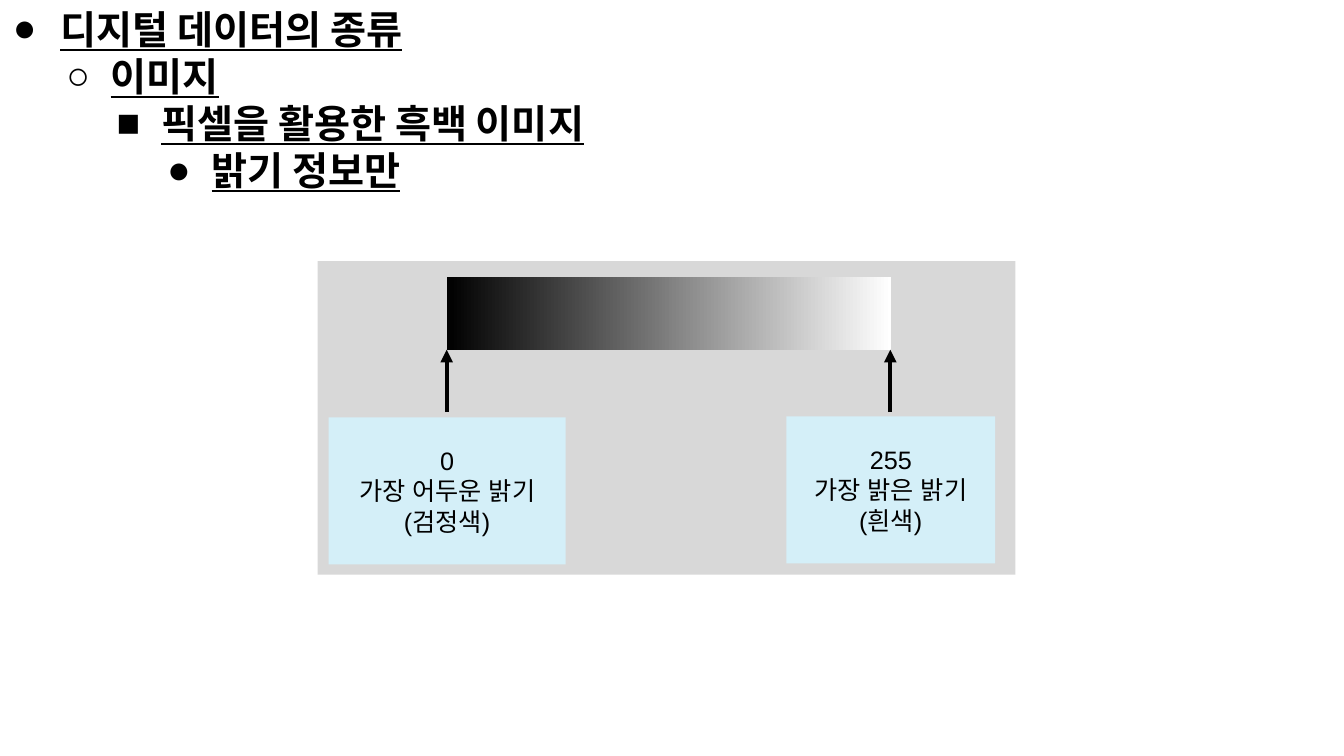
from lxml import etree
from pptx import Presentation
from pptx.dml.color import RGBColor
from pptx.enum.shapes import MSO_CONNECTOR, MSO_SHAPE
from pptx.enum.text import MSO_ANCHOR, PP_ALIGN
from pptx.oxml.ns import qn
from pptx.util import Inches, Pt

RECTANGLE = MSO_SHAPE.RECTANGLE
STRAIGHT = MSO_CONNECTOR.STRAIGHT
MIDDLE = MSO_ANCHOR.MIDDLE
CENTER = PP_ALIGN.CENTER

BLACK = RGBColor(0x00, 0x00, 0x00)
WHITE = RGBColor(0xFF, 0xFF, 0xFF)
GRAY = RGBColor(0xD8, 0xD8, 0xD8)
PALE_BLUE = RGBColor(0xD4, 0xEF, 0xF8)

OUTLINE_FONT = "Noto Sans CJK KR"
LABEL_FONT = "Arial"

OUTLINE = [
    ("●", "디지털 데이터의 종류"),
    ("○", "이미지"),
    ("■", "픽셀을 활용한 흑백 이미지"),
    ("●", "밝기 정보만"),
]


def format_run(run, font_name, size):
    run.font.name = font_name
    run.font.size = Pt(size)
    run.font.color.rgb = BLACK
    properties = run._r.get_or_add_rPr()
    etree.SubElement(properties, qn("a:ea")).set("typeface", font_name)


def add_bullet(paragraph, symbol, margin, indent):
    properties = paragraph._p.get_or_add_pPr()
    properties.set("marL", str(Inches(margin)))
    properties.set("indent", str(Inches(indent)))
    color = etree.SubElement(properties, qn("a:buClr"))
    etree.SubElement(color, qn("a:srgbClr")).set("val", str(BLACK))
    etree.SubElement(properties, qn("a:buFont")).set("typeface", LABEL_FONT)
    etree.SubElement(properties, qn("a:buChar")).set("char", symbol)


def add_outline(slide, left, top, width, height):
    box = slide.shapes.add_textbox(Inches(left), Inches(top), Inches(width), Inches(height))
    text_frame = box.text_frame
    text_frame.word_wrap = True
    text_frame.text = "\n".join(text for _, text in OUTLINE)
    for level, paragraph in enumerate(text_frame.paragraphs):
        paragraph.level = level
        paragraph.line_spacing = Pt(33.6)
        add_bullet(paragraph, OUTLINE[level][0], 0.5 * (level + 1), -0.44 if level else -0.47)
        run = paragraph.runs[0]
        format_run(run, OUTLINE_FONT, 28)
        run.font.bold = True
        run.font.underline = True


def add_rectangle(slide, left, top, width, height, color=None):
    shape = slide.shapes.add_shape(
        RECTANGLE, Inches(left), Inches(top), Inches(width), Inches(height)
    )
    shape.shadow.inherit = False
    shape.line.fill.background()
    if color is not None:
        shape.fill.solid()
        shape.fill.fore_color.rgb = color
    return shape


def add_gradient_bar(slide, left, top, width, height):
    bar = add_rectangle(slide, left, top, width, height)
    bar.fill.gradient()
    bar.fill.gradient_angle = 0
    for stop, position, color in zip(bar.fill.gradient_stops, (0, 1), (BLACK, WHITE)):
        stop.position = position
        stop.color.rgb = color


def add_up_arrow(slide, x, bottom, top):
    arrow = slide.shapes.add_connector(
        STRAIGHT, Inches(x), Inches(bottom), Inches(x), Inches(top)
    )
    arrow.line.color.rgb = BLACK
    arrow.line.width = Pt(3)
    line = arrow.line._get_or_add_ln()
    etree.SubElement(line, qn("a:tailEnd")).set("type", "triangle")
    etree.SubElement(arrow._element.spPr, qn("a:effectLst"))


def add_label(slide, left, top, width, height, text):
    label = add_rectangle(slide, left, top, width, height, PALE_BLUE)
    text_frame = label.text_frame
    text_frame.word_wrap = True
    text_frame.vertical_anchor = MIDDLE
    text_frame.text = text
    for paragraph in text_frame.paragraphs:
        paragraph.alignment = CENTER
        format_run(paragraph.runs[0], LABEL_FONT, 18)


def add_brightness_scale(slide, left, top, width, height):
    add_rectangle(slide, left, top, width, height, GRAY)
    add_gradient_bar(slide, left + 1.28, top + 0.16, 4.41, 0.72)
    for x in (1.28, 5.68):
        add_up_arrow(slide, left + x, top + 1.5, top + 0.88)
    add_label(slide, left + 0.11, top + 1.55, 2.35, 1.46, "0\n가장 어두운 밝기\n(검정색)")
    add_label(slide, left + 4.65, top + 1.54, 2.07, 1.46, "255\n가장 밝은 밝기\n(흰색)")


def main():
    presentation = Presentation()
    presentation.slide_width = Inches(13.33)
    presentation.slide_height = Inches(7.5)
    slide = presentation.slides.add_slide(presentation.slide_layouts[6])
    add_outline(slide, 0, 0, 13.33, 5.31)
    add_brightness_scale(slide, 3.15, 2.59, 6.92, 3.11)
    presentation.save("out.pptx")


if __name__ == "__main__":
    main()
